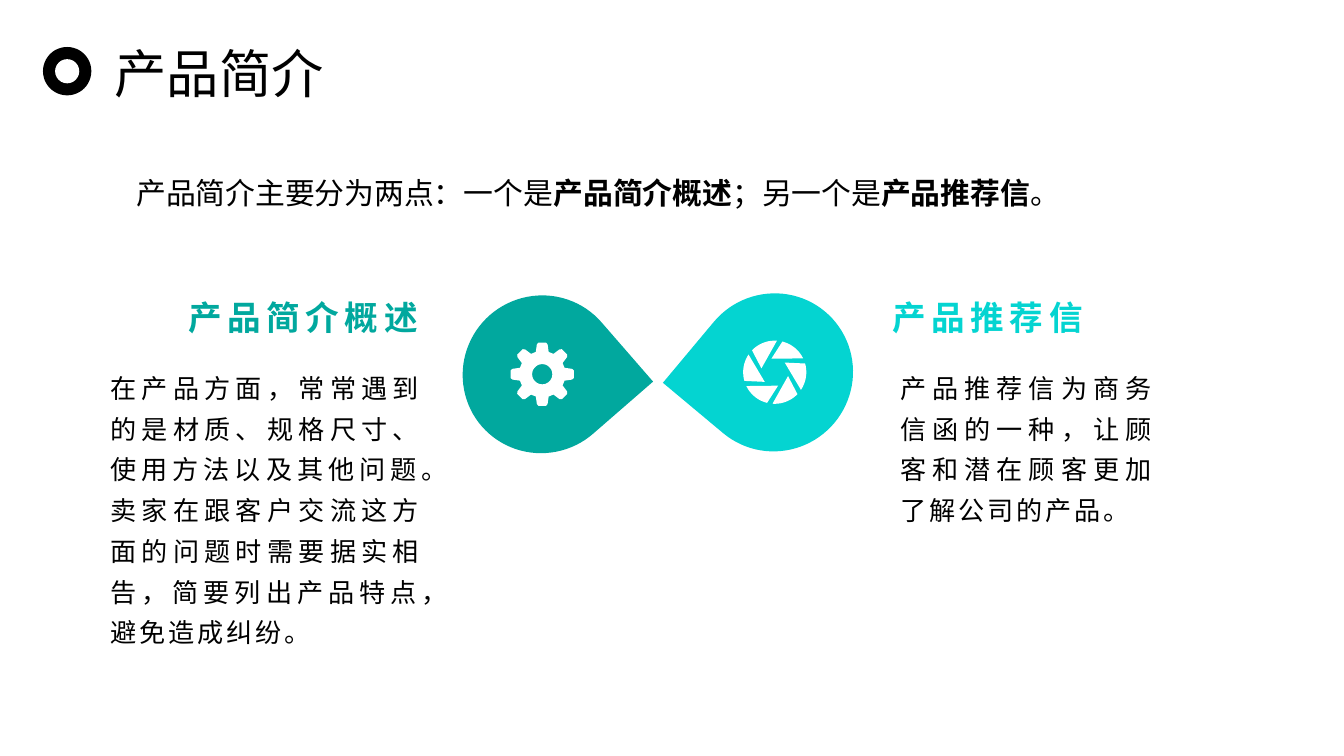
from dataclasses import dataclass
from math import cos, radians, sin
from typing import NamedTuple

from lxml.etree import SubElement
from pptx import Presentation
from pptx.dml.color import RGBColor
from pptx.enum.shapes import MSO_SHAPE as Preset
from pptx.enum.text import MSO_AUTO_SIZE as AutoSize, PP_ALIGN as Align
from pptx.oxml.ns import qn
from pptx.util import Inches, Pt

FONT = "Noto Sans CJK SC"
COLORS = {"black": "000000", "white": "FFFFFF", "teal": "01A89E", "cyan": "04D4D1"}
COLUMNS = 100
SLIDE_WIDTH = Inches(10)
SLIDE_HEIGHT = SLIDE_WIDTH * 9 // 16
CELL = SLIDE_WIDTH // COLUMNS
Point = tuple[float, float]


class Area(NamedTuple):
    column: float
    row: float
    columns: float
    rows: float

    def emu(self) -> list[int]:
        return [round(value * CELL) for value in self]


class Insets(NamedTuple):
    left: float
    top: float
    right: float
    bottom: float


@dataclass
class Label:
    area: Area
    spans: list[str]
    size: float
    color: str = "black"
    bold: bool = False
    tracking: float = 0
    spacing: float = 1
    align: Align = Align.LEFT
    insets: Insets = Insets(1, 0.5, 1, 0.5)
    wrap: bool = True
    grow: bool = False


@dataclass
class Topic:
    color: str
    drop: Area
    rotation: float
    flip: str
    heading: str
    heading_area: Area
    heading_align: Align
    body: str
    body_area: Area


HEADING_INSETS = Insets(0.7, 0.4, 0.7, 0)
BODY_INSETS = Insets(0.7, 0, 0.7, 0.4)
INTRO_INSETS = Insets(0.9, 0.4, 0.9, 0.4)

TOPICS = [
    Topic("cyan", Area(51.7, 21.85, 11.8, 11.7), 129.9, "flipV",
          "产品推荐信", Area(65.7, 21.1, 20.7, 3.3), Align.LEFT,
          "产品推荐信为商务信函的一种，让顾客和潜在顾客更加了解公司的产品。",
          Area(66.3, 27, 20.3, 13.8)),
    Topic("teal", Area(34.4, 22, 11.8, 11.7), 139, "flipH",
          "产品简介概述", Area(11.2, 21.1, 20.6, 3.3), Align.RIGHT,
          "在产品方面，常常遇到的是材质、规格尺寸、使用方法以及其他问题。"
          "卖家在跟客户交流这方面的问题时需要据实相告，简要列出产品特点，避免造成纠纷。",
          Area(7.5, 27, 24.6, 22)),
]


def paint(shape, color: str) -> None:
    shape.shadow.inherit = False
    shape.fill.solid()
    shape.fill.fore_color.rgb = RGBColor.from_string(COLORS[color])
    shape.line.fill.background()


def add_preset(page, preset: Preset, area: Area, color: str):
    shape = page.shapes.add_shape(preset, *area.emu())
    paint(shape, color)
    return shape


def add_label(page, label: Label) -> None:
    box = page.shapes.add_textbox(*label.area.emu())
    frame = box.text_frame
    frame.word_wrap = label.wrap
    frame.auto_size = AutoSize.SHAPE_TO_FIT_TEXT if label.grow else AutoSize.NONE
    frame.margin_left, frame.margin_top, frame.margin_right, frame.margin_bottom = (
        round(inset * CELL) for inset in label.insets)
    para = frame.paragraphs[0]
    para.alignment = label.align
    para.line_spacing = label.spacing
    for index, text in enumerate(label.spans):
        span = para.add_run()
        span.text = text
        span.font.size = Pt(label.size)
        span.font.bold = label.bold or index % 2 == 1
        span.font.color.rgb = RGBColor.from_string(COLORS[label.color])
        span.font.name = FONT
        properties = span.font._element
        SubElement(properties, qn("a:ea")).set("typeface", FONT)
        if label.tracking:
            properties.set("spc", str(round(label.tracking * 100)))


def turn(point: Point, degrees: float) -> Point:
    angle = radians(degrees)
    x, y = point
    return x * cos(angle) - y * sin(angle), x * sin(angle) + y * cos(angle)


def arc(radius: float, start: int, end: int, step: int) -> list[Point]:
    return [turn((radius, 0), angle) for angle in range(start, end + 1, step)]


def gear_contours() -> list[list[Point]]:
    tooth = [(-0.48, -1.66), (-0.4, -2.22), (-0.28, -2.35),
             (0.28, -2.35), (0.4, -2.22), (0.48, -1.66)]
    rim = [turn(point, 45 * index) for index in range(8) for point in tooth]
    return [rim, arc(0.75, 0, 350, 10)[::-1]]


def shutter_contours() -> list[list[Point]]:
    blade = arc(2.35, -76, -26, 5) + [(-0.25, -1)]
    return [[turn(point, 60 * index) for point in blade] for index in range(6)]


def add_icon(page, center: Point, contours: list[list[Point]]) -> None:
    placed = [[(round((center[0] + x) * CELL), round((center[1] + y) * CELL))
               for x, y in contour] for contour in contours]
    builder = page.shapes.build_freeform(*placed[0][0])
    for index, contour in enumerate(placed):
        if index:
            builder.move_to(*contour[0])
        builder.add_line_segments(contour[1:], close=True)
    paint(builder.convert_to_shape(), "white")


def add_topic(page, topic: Topic) -> None:
    drop = add_preset(page, Preset.TEAR, topic.drop, topic.color)
    drop.rotation = topic.rotation
    drop._element.spPr.find(qn("a:xfrm")).set(topic.flip, "1")
    add_label(page, Label(topic.heading_area, [topic.heading], 18, topic.color, True, 3, 1.2,
                          topic.heading_align, HEADING_INSETS))
    add_label(page, Label(topic.body_area, [topic.body], 14, tracking=1.5, spacing=1.3,
                          align=Align.JUSTIFY, insets=BODY_INSETS))


def main() -> None:
    deck = Presentation()
    deck.slide_width, deck.slide_height = SLIDE_WIDTH, SLIDE_HEIGHT
    page = deck.slides.add_slide(deck.slide_layouts[6])
    add_preset(page, Preset.OVAL, Area(3.2, 3.5, 3.6, 3.6), "black")
    add_preset(page, Preset.OVAL, Area(4.1, 4.4, 1.8, 1.8), "white")
    for topic in TOPICS:
        add_topic(page, topic)
    add_icon(page, (40.35, 27.85), gear_contours())
    add_icon(page, (57.65, 27.7), shutter_contours())
    add_label(page, Label(Area(7.55, 2.6, 17.6, 5.7), ["产品简介"], 28, wrap=False, grow=True))
    intro = ["产品简介主要分为两点：一个是", "产品简介概述", "；另一个是", "产品推荐信", "。"]
    add_label(page, Label(Area(9.25, 11.8, 82.1, 4.4), intro, 16, spacing=1.3,
                          insets=INTRO_INSETS, grow=True))
    deck.save("out.pptx")


if __name__ == "__main__":
    main()
